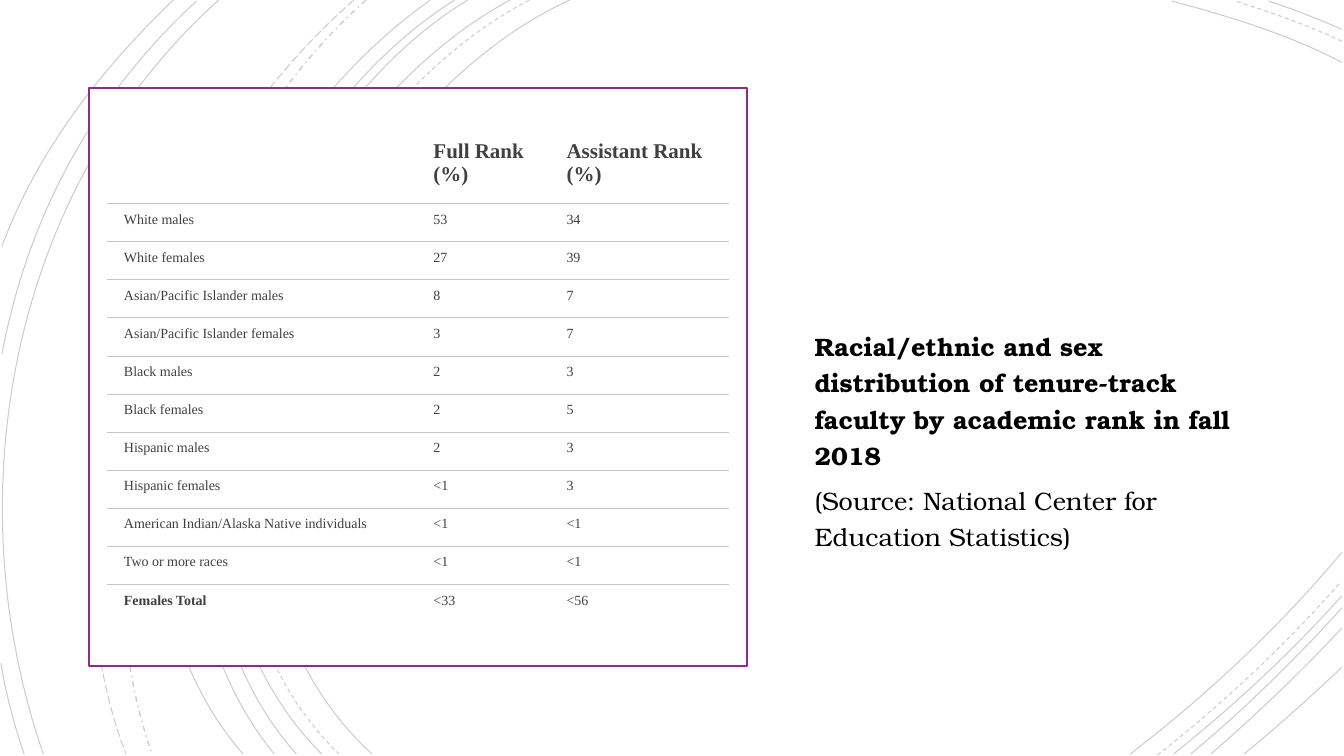
from dataclasses import dataclass

import pptx
import pptx.dml.color
import pptx.enum.dml
import pptx.enum.shapes
import pptx.enum.text
import pptx.oxml
import pptx.oxml.ns
import pptx.shapes.group
import pptx.slide
import pptx.table
import pptx.text.text
import pptx.util

PX = 9144  # 100 px to the inch
SLIDE_W, SLIDE_H = 1333, 750
COLORS = {
    "white": "FFFFFF",
    "black": "000000",
    "frame": "92278F",
    "table_text": "404040",
    "rule": "C7C6C1",
}
TABLE_FONT, CAPTION_FONT = "Times New Roman", "TeX Gyre Bonum"
PLAIN_TABLE_STYLE = "{2D5ABB26-0587-4C30-8999-92F81FD0307C}"
DASH = pptx.enum.dml.MSO_LINE

Point = tuple[int, int]


@dataclass(frozen=True)
class Arc:
    """A cubic curve: start, two control points, end."""
    start: Point
    control1: Point
    control2: Point
    end: Point
    dash: DASH = DASH.SOLID
    weight: float = 0.75


@dataclass(frozen=True)
class RankRow:
    label: str
    full: str
    assistant: str
    size: int = 10
    bold_label: bool = False
    bold_values: bool = False


ARCS = [
    Arc((565, 0), (315, 115), (143, 540), (369, 748)),
    Arc((1331, 62), (1278, 34), (1218, 16), (1162, 1)),
    Arc((1121, 748), (1197, 690), (1269, 622), (1331, 548)),
    Arc((525, 0), (285, 125), (123, 537), (336, 748), DASH.DASH),
    Arc((1331, 41), (1297, 25), (1260, 12), (1225, 1), DASH.DASH),
    Arc((1148, 749), (1213, 698), (1275, 640), (1330, 577), DASH.DASH),
    Arc((506, 0), (270, 127), (110, 537), (319, 748)),
    Arc((1331, 29), (1307, 19), (1283, 9), (1258, 1)),
    Arc((1164, 748), (1223, 701), (1280, 648), (1331, 591)),
    Arc((464, 0), (244, 133), (110, 541), (294, 748)),
    Arc((1181, 748), (1234, 704), (1284, 655), (1331, 603)),
    Arc((451, 0), (231, 138), (97, 533), (272, 748)),
    Arc((1201, 748), (1246, 709), (1290, 667), (1331, 623)),
    Arc((427, 0), (217, 147), (53, 529), (241, 748)),
    Arc((1234, 748), (1267, 721), (1299, 692), (1331, 662)),
    Arc((363, 0), (176, 166), (65, 509), (151, 748), DASH.DASH_DOT, 1),
    Arc((351, 0), (157, 169), (29, 499), (125, 748), DASH.LONG_DASH),
    Arc((217, 0), (11, 185), (-46, 490), (43, 748)),
    Arc((195, 1), (92, 96), (28, 214), (2, 351)),
    Arc((1, 658), (6, 689), (14, 719), (24, 748)),
    Arc((172, 0), (100, 69), (37, 150), (2, 244)),
]

RANK_ROWS = [
    RankRow("", "Full Rank (%)", "Assistant Rank (%)", 15, True, True),
    RankRow("White males", "53", "34"),
    RankRow("White females", "27", "39"),
    RankRow("Asian/Pacific Islander males", "8", "7"),
    RankRow("Asian/Pacific Islander females", "3", "7"),
    RankRow("Black males", "2", "3"),
    RankRow("Black females", "2", "5"),
    RankRow("Hispanic males", "2", "3"),
    RankRow("Hispanic females", "<1", "3"),
    RankRow("American Indian/Alaska Native individuals", "<1", "<1"),
    RankRow("Two or more races", "<1", "<1"),
    RankRow("Females Total", "<33", "<56", bold_label=True),
]
COLUMN_WIDTHS = [307, 132, 178]
TABLE_H, HEADER_H = 487, 71

CAPTION = [
    ("Racial/ethnic and sex distribution of tenure-track faculty "
     "by academic rank in fall 2018", True),
    ("(Source: National Center for Education Statistics)", False),
]


def px(n: float) -> pptx.util.Emu:
    return pptx.util.Emu(round(n * PX))


def rgb(name: str) -> pptx.dml.color.RGBColor:
    return pptx.dml.color.RGBColor.from_string(COLORS[name])


def add_run(p: pptx.text.text._Paragraph, text: str, font: str, size: int,
            color: str, bold: bool) -> None:
    r = p.add_run()
    r.text = text
    r.font.name = font
    r.font.size = pptx.util.Pt(size)
    r.font.bold = bold
    r.font.color.rgb = rgb(color)


def add_arc(group: pptx.shapes.group.GroupShape, arc: Arc) -> None:
    builder = group.shapes.build_freeform(*arc.start, scale=PX)
    builder.add_line_segments([arc.control1, arc.control2, arc.end], close=False)
    sp = builder.convert_to_shape()
    sp.shadow.inherit = False
    sp.fill.background()
    sp.line.color.rgb = rgb("black")
    sp.line.width = pptx.util.Pt(arc.weight)
    sp.line.dash_style = arc.dash

    # The three segments become the points of one Bezier curve.
    segments = sp._element.xpath(".//a:lnTo")
    outline = segments[0].getparent()
    curve = outline.makeelement(pptx.oxml.ns.qn("a:cubicBezTo"))
    outline.append(curve)
    for segment in segments:
        curve.append(segment[0])
        outline.remove(segment)

    color = sp._element.xpath(".//a:ln//a:srgbClr")[0]
    color.append(color.makeelement(pptx.oxml.ns.qn("a:alpha"), {"val": "20000"}))


def add_frame(s: pptx.slide.Slide) -> None:
    sp = s.shapes.add_shape(pptx.enum.shapes.MSO_SHAPE.RECTANGLE,
                            px(88), px(87), px(653), px(574))
    sp.shadow.inherit = False
    sp.fill.solid()
    sp.fill.fore_color.rgb = rgb("white")
    sp.line.color.rgb = rgb("frame")
    sp.line.width = pptx.util.Pt(1.5)


def set_rules(cell: pptx.table._Cell, sides: list[str]) -> None:
    """Draw thin rules on the given sides, "T" before "B"."""
    tc_pr = cell._tc.get_or_add_tcPr()
    for i, side in enumerate(sides):
        tc_pr.insert(i, pptx.oxml.parse_xml(
            f'<a:ln{side} {pptx.oxml.ns.nsdecls("a")} w="9525"><a:solidFill>'
            f'<a:srgbClr val="{COLORS["rule"]}"/></a:solidFill></a:ln{side}>'))


def add_rank_table(s: pptx.slide.Slide) -> None:
    last = len(RANK_ROWS) - 1
    table = s.shapes.add_table(len(RANK_ROWS), len(COLUMN_WIDTHS), px(106), px(131),
                               px(sum(COLUMN_WIDTHS)), px(TABLE_H)).table
    table._tbl.xpath(".//a:tableStyleId")[0].text = PLAIN_TABLE_STYLE
    table.horz_banding = False
    for column, width in zip(table.columns, COLUMN_WIDTHS):
        column.width = px(width)
    for i, row in enumerate(RANK_ROWS):
        table.rows[i].height = px((TABLE_H - HEADER_H) / last if i else HEADER_H)
        sides = ["T"] * (i > 0) + ["B"] * (i < last)
        for j, text in enumerate([row.label, row.full, row.assistant]):
            cell = table.cell(i, j)
            cell.fill.background()
            cell.margin_left, cell.margin_right = px(17), px(12)
            cell.margin_top = cell.margin_bottom = px(8)
            set_rules(cell, sides)
            if text:
                bold = row.bold_values if j else row.bold_label
                add_run(cell.text_frame.paragraphs[0], text, TABLE_FONT,
                        row.size, "table_text", bold)


def add_caption(s: pptx.slide.Slide) -> None:
    tf = s.shapes.add_textbox(px(798), px(256), px(448), px(402)).text_frame
    tf.word_wrap = True
    tf.vertical_anchor = pptx.enum.text.MSO_ANCHOR.MIDDLE
    tf.margin_bottom = px(49)
    for i, (text, bold) in enumerate(CAPTION):
        p = tf.add_paragraph() if i else tf.paragraphs[0]
        p.line_spacing = 1.2
        p.space_after = pptx.util.Pt(6)
        add_run(p, text, CAPTION_FONT, 18, "black", bold)


def main() -> None:
    prs = pptx.Presentation()
    prs.slide_width, prs.slide_height = px(SLIDE_W), px(SLIDE_H)
    s = prs.slides.add_slide(prs.slide_layouts[6])
    s.background.fill.solid()
    s.background.fill.fore_color.rgb = rgb("white")
    arcs = s.shapes.add_group_shape()
    for arc in ARCS:
        add_arc(arcs, arc)
    add_frame(s)
    add_caption(s)
    add_rank_table(s)
    prs.save("out.pptx")


if __name__ == "__main__":
    main()
